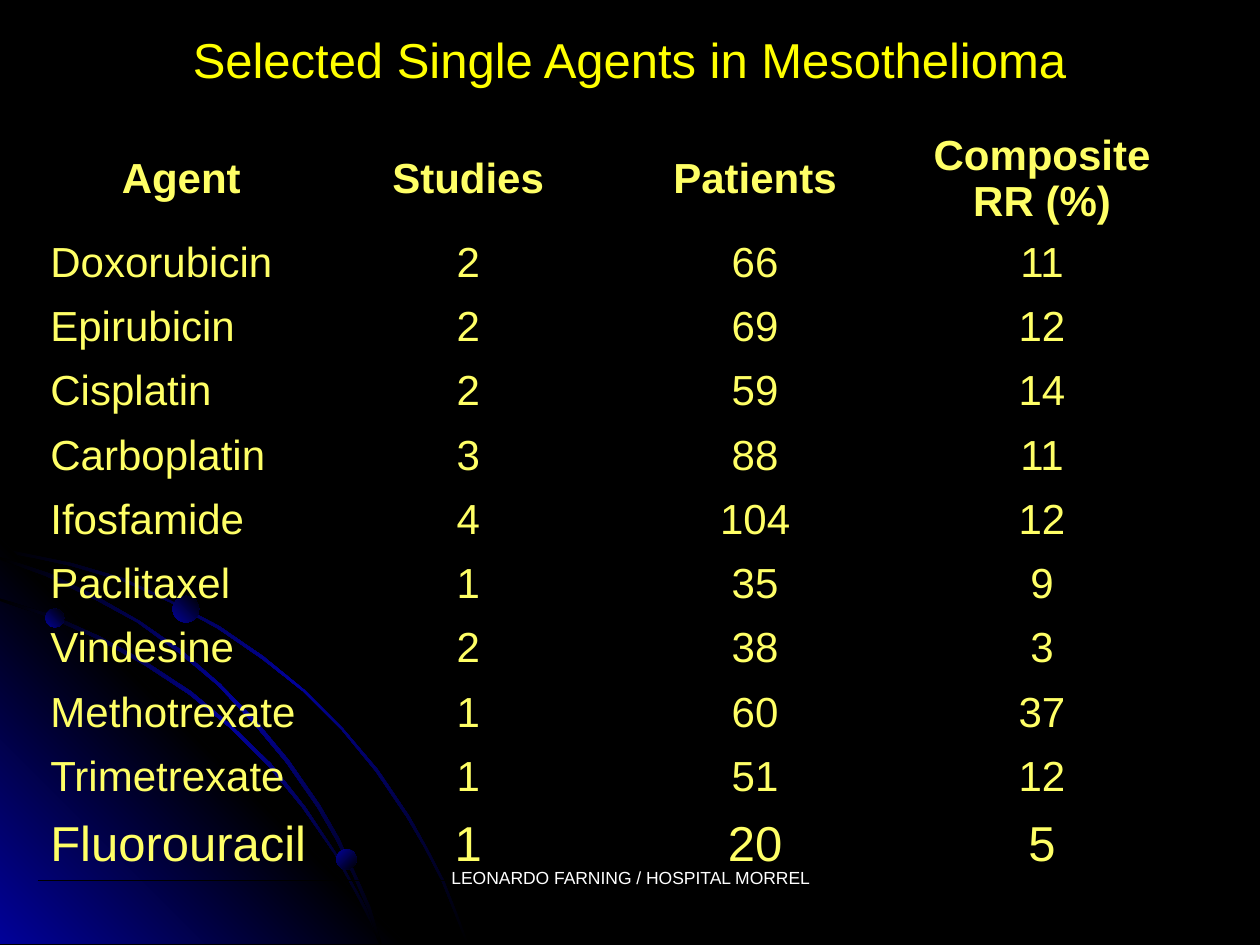
import pptx
import pptx.dml.color
import pptx.enum.shapes
import pptx.enum.text
import pptx.oxml
import pptx.oxml.ns
import pptx.util
from pptx.util import Inches

RGBColor = pptx.dml.color.RGBColor
BLACK = RGBColor(0x00, 0x00, 0x00)
BLUE = RGBColor(0x01, 0x01, 0x99)
YELLOW = RGBColor(0xFF, 0xFF, 0x00)
PALE_YELLOW = RGBColor(0xFF, 0xFF, 0x66)
WHITE = RGBColor(0xFF, 0xFF, 0xFF)
FONT = "Arial"
NO_GRID_STYLE = "{2D5ABB26-0587-4C30-8999-92F81FD0307C}"
CENTER = pptx.enum.text.PP_ALIGN.CENTER
LEFT = pptx.enum.text.PP_ALIGN.LEFT
MIDDLE = pptx.enum.text.MSO_ANCHOR.MIDDLE
TOP = pptx.enum.text.MSO_ANCHOR.TOP

# Content
TITLE = "Selected Single Agents in Mesothelioma"
FOOTER = "LEONARDO FARNING / HOSPITAL MORREL"
ROWS = [
    ("Agent", "Studies", "Patients", "Composite RR (%)"),
    ("Doxorubicin", "2", "66", "11"),
    ("Epirubicin", "2", "69", "12"),
    ("Cisplatin", "2", "59", "14"),
    ("Carboplatin", "3", "88", "11"),
    ("Ifosfamide", "4", "104", "12"),
    ("Paclitaxel", "1", "35", "9"),
    ("Vindesine", "2", "38", "3"),
    ("Methotrexate", "1", "60", "37"),
    ("Trimetrexate", "1", "51", "12"),
    ("Fluorouracil", "1", "20", "5"),
]

# Corner decoration: outlines in hundredths of an inch
OUTER_ARC = [
    (57, 447), (28, 441), (0, 435), (0, 438), (28, 443), (56, 449), (97, 461),
    (135, 478), (173, 499), (208, 523), (241, 549), (271, 579), (298, 612),
    (323, 649), (337, 673), (350, 698), (360, 723), (370, 749), (372, 749),
    (362, 723), (352, 698), (339, 673), (325, 648), (300, 611), (272, 578),
    (242, 548), (209, 521), (174, 497), (136, 477), (98, 459)]
CORNER = [(322, 749), (0, 749), (0, 427)]
INNER_ARC = [
    (285, 714), (294, 732), (301, 749), (303, 749), (296, 730), (286, 712),
    (266, 676), (242, 640), (215, 606), (184, 576), (152, 549), (117, 526),
    (79, 505), (41, 488), (0, 475), (0, 477), (39, 490), (77, 507), (115, 528),
    (150, 551), (183, 578), (213, 608), (240, 641), (265, 677)]
MIDDLE_ARC = [
    (0, 442), (0, 444), (36, 457), (74, 475), (109, 494), (142, 518), (173, 544),
    (202, 575), (227, 605), (252, 641), (267, 667), (280, 694), (292, 722),
    (301, 749), (303, 749), (294, 720), (282, 693), (269, 665), (254, 639),
    (229, 603), (204, 573), (175, 543), (144, 516), (111, 493), (76, 473),
    (39, 455)]
ARC_COLORS = (BLACK, BLUE, BLACK)
OUTLINES = [  # points, gradient colours, angle
    (OUTER_ARC, ARC_COLORS, 45),
    (CORNER, (BLUE, BLACK, BLUE), 315),
    (INNER_ARC, ARC_COLORS, 45),
    (MIDDLE_ARC, ARC_COLORS, 45),
]
DOTS = [  # left, top, diameter, angle
    (0.36, 4.83, 0.15, 315),
    (2.67, 6.74, 0.16, 45),
    (1.37, 4.73, 0.21, 315),
]


def paint_gradient(shape, colors, angle):
    """Fill with evenly spaced colours; the angle runs clockwise."""
    stops = "".join(
        f'<a:gs pos="{100000 * index // (len(colors) - 1)}">'
        f'<a:srgbClr val="{color}"/></a:gs>'
        for index, color in enumerate(colors))
    gradient = pptx.oxml.parse_xml(
        f'<a:gradFill {pptx.oxml.ns.nsdecls("a")} rotWithShape="1">'
        f'<a:gsLst>{stops}</a:gsLst><a:lin ang="{angle * 60000}" scaled="0"/></a:gradFill>')
    shape.shadow.inherit = False
    shape.line.fill.background()
    shape.fill.background()
    properties = shape.element.spPr
    properties.replace(properties.find(pptx.oxml.ns.qn("a:noFill")), gradient)


def write_text(frame, text, size, color, alignment=CENTER, bold=False):
    frame.word_wrap = True
    paragraph = frame.paragraphs[0]
    paragraph.alignment = alignment
    run = paragraph.add_run()
    run.text = text
    run.font.name = FONT
    run.font.size = pptx.util.Pt(size)
    run.font.bold = bold
    run.font.color.rgb = color


def add_borders(cell, sides):
    properties = cell._tc.get_or_add_tcPr()
    for index, side in enumerate(sides):
        properties.insert(index, pptx.oxml.parse_xml(
            f'<a:ln{side} {pptx.oxml.ns.nsdecls("a")} w="12700"><a:solidFill>'
            f'<a:srgbClr val="{BLACK}"/></a:solidFill></a:ln{side}>'))


def add_decoration(slide):
    for points, colors, angle in OUTLINES:
        builder = slide.shapes.build_freeform(*points[0], scale=Inches(0.01))
        builder.add_line_segments(points[1:], close=True)
        paint_gradient(builder.convert_to_shape(), colors, angle)
    for left, top, diameter, angle in DOTS:
        dot = slide.shapes.add_shape(
            pptx.enum.shapes.MSO_SHAPE.OVAL,
            Inches(left), Inches(top), Inches(diameter), Inches(diameter))
        paint_gradient(dot, (BLUE, BLACK), angle)


def add_agent_table(slide):
    last = len(ROWS) - 1
    graphic = slide.shapes.add_table(
        len(ROWS), len(ROWS[0]), Inches(0.3), Inches(0.99), Inches(9.11), Inches(5.98))
    table = graphic.table
    table.first_row = table.horz_banding = False
    table._tbl.tblPr.find(pptx.oxml.ns.qn("a:tableStyleId")).text = NO_GRID_STYLE
    for row_index, values in enumerate(ROWS):
        header = row_index == 0
        height = {0: 0.86, last: 0.55}.get(row_index, 0.51)
        table.rows[row_index].height = Inches(height)
        sides = {0: "TB", 1: "T", last: "B"}.get(row_index, "")
        for column_index, value in enumerate(values):
            cell = table.cell(row_index, column_index)
            cell.fill.background()
            cell.vertical_anchor = MIDDLE if header else TOP
            alignment = CENTER if header or column_index else LEFT
            size = 28 if row_index == last else 24
            write_text(cell.text_frame, value, size, PALE_YELLOW, alignment, header)
            add_borders(cell, sides)


def main():
    presentation = pptx.Presentation()
    presentation.slide_width, presentation.slide_height = Inches(10), Inches(7.5)
    slide = presentation.slides.add_slide(presentation.slide_layouts[5])
    slide.background.fill.solid()
    slide.background.fill.fore_color.rgb = BLACK
    add_decoration(slide)

    # Title
    title = slide.shapes.title
    title.left, title.top = Inches(0.43), Inches(0.05)
    title.width, title.height = Inches(9.13), Inches(0.83)
    title.text_frame.vertical_anchor = MIDDLE
    write_text(title.text_frame, TITLE, 28, YELLOW)

    add_agent_table(slide)

    # Footer
    footer = slide.shapes.add_textbox(Inches(3.42), Inches(6.83), Inches(3.17), Inches(0.5))
    write_text(footer.text_frame, FOOTER, 10, WHITE)
    presentation.save("out.pptx")


if __name__ == "__main__":
    main()
